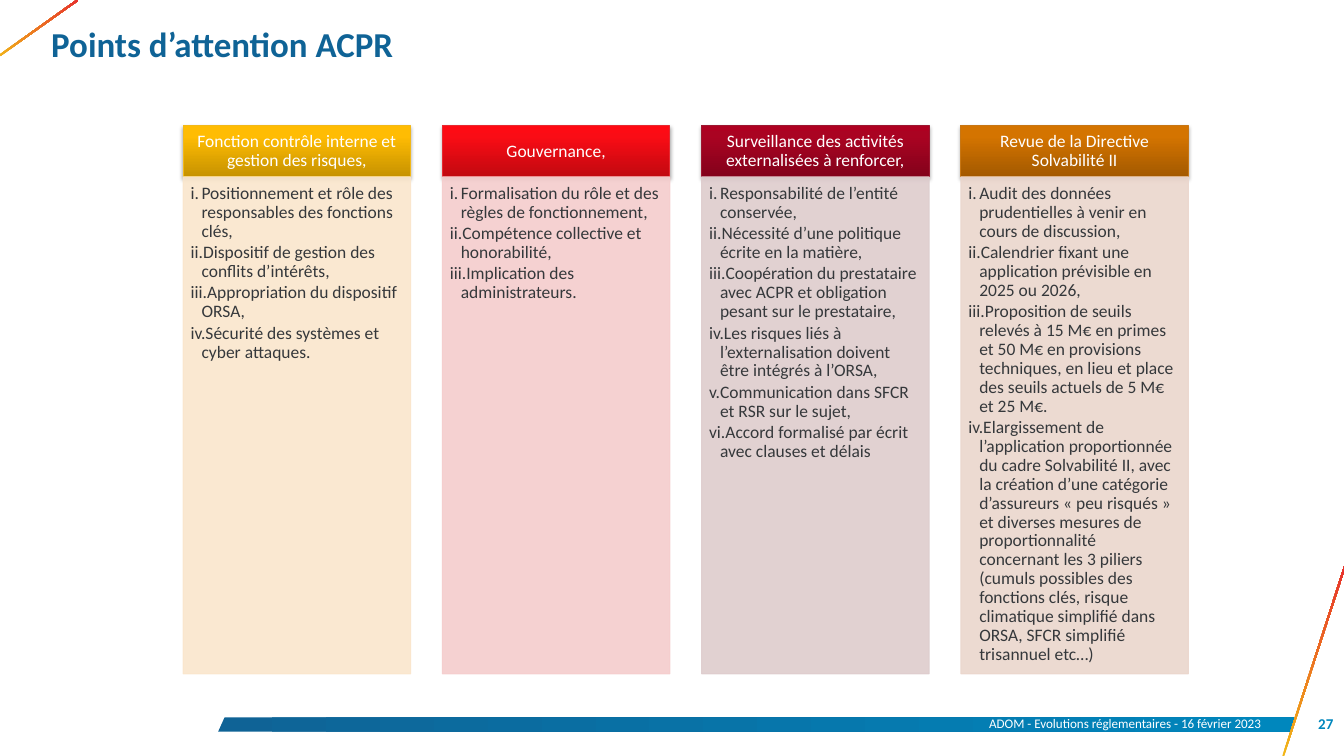
from dataclasses import dataclass
from copy import deepcopy

from lxml.etree import SubElement
from pptx import Presentation
from pptx.dml.color import RGBColor
from pptx.enum.shapes import MSO_SHAPE
from pptx.enum.text import MSO_ANCHOR, PP_ALIGN
from pptx.oxml.ns import qn
from pptx.shapes.autoshape import Shape
from pptx.slide import Slide
from pptx.text.text import TextFrame
from pptx.util import Cm, Pt

WHITE = RGBColor(0xFF, 0xFF, 0xFF)
INK = RGBColor(0x35, 0x38, 0x3B)
NAVY = RGBColor(0x0F, 0x63, 0x96)
BLUE = RGBColor(0x00, 0x87, 0xBD)
GOLD = RGBColor(0xF2, 0xB8, 0x18)
RED = RGBColor(0xE6, 0x29, 0x30)
WINE = RGBColor(0x9C, 0x17, 0x30)
RUST = RGBColor(0xC7, 0x76, 0x14)

LEFT, STEP, WIDTH = 5.18, 7.33, 6.43
TOP, HEAD, BODY = 3.56, 1.44, 14.05

Box = tuple[float, float, float, float]
Stops = list[tuple[float, RGBColor]]


@dataclass
class Topic:
    title: str
    edge: RGBColor
    low: RGBColor
    mid: RGBColor
    high: RGBColor
    pale: RGBColor
    items: list[str]


@dataclass
class Label:
    text: str
    box: Box
    size: float
    color: RGBColor
    bold: bool
    align: PP_ALIGN
    anchor: MSO_ANCHOR
    pads: Box


TOPICS = [
    Topic("Fonction contrôle interne et gestion des risques,", GOLD,
          RGBColor(0xC6, 0x92, 0x00), RGBColor(0xFF, 0xBC, 0x03),
          RGBColor(0xFF, 0xBC, 0x04), RGBColor(0xFA, 0xE6, 0xCC),
          ["Positionnement et rôle des responsables des fonctions clés,",
           "Dispositif de gestion des conflits d’intérêts,",
           "Appropriation du dispositif ORSA,",
           "Sécurité des systèmes et cyber attaques."]),
    Topic("Gouvernance,", RED,
          RGBColor(0xC1, 0x09, 0x10), RGBColor(0xFA, 0x0C, 0x15),
          RGBColor(0xFF, 0x09, 0x12), RGBColor(0xF5, 0xCD, 0xCD),
          ["Formalisation du rôle et des règles de fonctionnement,",
           "Compétence collective et honorabilité,",
           "Implication des administrateurs."]),
    Topic("Surveillance des activités externalisées à renforcer,", WINE,
          RGBColor(0x83, 0x02, 0x1B), RGBColor(0xAA, 0x03, 0x22),
          RGBColor(0xAE, 0x00, 0x21), RGBColor(0xDE, 0xCC, 0xCD),
          ["Responsabilité de l’entité conservée,",
           "Nécessité d’une politique écrite en la matière,",
           "Coopération du prestataire avec ACPR et obligation pesant sur "
           "le prestataire,",
           "Les risques liés à l’externalisation doivent être intégrés à "
           "l’ORSA,",
           "Communication dans SFCR et RSR sur le sujet,",
           "Accord formalisé par écrit avec clauses et délais"]),
    Topic("Revue de la Directive Solvabilité II", RUST,
          RGBColor(0xA3, 0x59, 0x00), RGBColor(0xD4, 0x74, 0x00),
          RGBColor(0xD5, 0x75, 0x00), RGBColor(0xEB, 0xD6, 0xCC),
          ["Audit des données prudentielles à venir en cours de discussion,",
           "Calendrier fixant une application prévisible en 2025 ou 2026,",
           "Proposition de seuils relevés à 15 M€ en primes et 50 M€ en "
           "provisions techniques, en lieu et place des seuils actuels de "
           "5 M€ et 25 M€.",
           "Elargissement de l’application proportionnée du cadre "
           "Solvabilité II, avec la création d’une catégorie d’assureurs "
           "« peu risqués » et diverses mesures de proportionnalité "
           "concernant les 3 piliers (cumuls possibles des fonctions clés, "
           "risque climatique simplifié dans ORSA, SFCR simplifié "
           "trisannuel etc…)"]),
]

LABELS = [
    Label("Points d’attention ACPR", (1.35, 0.54, 35.31, 2.29), 28, NAVY, True,
          PP_ALIGN.LEFT, MSO_ANCHOR.TOP, (0.1, 0.1, 0.1, 0.1)),
    Label("ADOM - Evolutions réglementaires - 16 février 2023",
          (7.92, 20.1, 27.99, 0.69), 10.5, WHITE, False,
          PP_ALIGN.RIGHT, MSO_ANCHOR.MIDDLE, (0.25, 0.13, 0.25, 0.13)),
    Label("27", (36.25, 20.17, 1.45, 0.58), 12, BLUE, True,
          PP_ALIGN.RIGHT, MSO_ANCHOR.MIDDLE, (0, 0, 0, 0)),
]

# Thin slanted bars: box and rotation
BARS = [((34.24, 18.57, 5.89, 0.05), 288), ((-0.25, 0.76, 2.69, 0.05), 324.6)]


def blend(shape: Shape, stops: Stops, angle: float) -> None:
    """Fill with a gradient; the angle runs counter-clockwise."""
    fill = shape.fill
    fill.gradient()
    fill.gradient_angle = angle
    marks = shape.element.spPr.find(".//" + qn("a:gsLst"))
    while len(marks) < len(stops):
        marks.append(deepcopy(marks[0]))
    for mark, (place, color) in zip(fill.gradient_stops, stops):
        mark.position = place
        mark.color.rgb = color


def fade(shape: Shape, percent: int) -> None:
    """Make the fill and line of a shape translucent."""
    for color in shape.element.spPr.iter(qn("a:srgbClr")):
        SubElement(color, qn("a:alpha"), val=str(percent * 1000))


def shade(shape: Shape) -> None:
    """Cast a soft shadow downwards."""
    effects = shape.element.spPr.find(qn("a:effectLst"))
    outer = SubElement(effects, qn("a:outerShdw"), blurRad=str(Pt(3.1)),
                       dist=str(Pt(1.8)), dir="5400000", rotWithShape="0")
    color = SubElement(outer, qn("a:srgbClr"), val="000000")
    SubElement(color, qn("a:alpha"), val="35000")


def add_rect(slide: Slide, box: Box) -> Shape:
    shape = slide.shapes.add_shape(MSO_SHAPE.RECTANGLE, *map(Cm, box))
    shape.shadow.inherit = False
    shape.line.fill.background()
    return shape


def outline(shape: Shape, color: RGBColor) -> None:
    shape.line.color.rgb = color
    shape.line.width = Pt(0.75)


def style(frame: TextFrame, size: float, color: RGBColor, align: PP_ALIGN,
          anchor: MSO_ANCHOR, pads: Box, bold: bool = False) -> None:
    frame.word_wrap = True
    frame.vertical_anchor = anchor
    (frame.margin_left, frame.margin_top,
     frame.margin_right, frame.margin_bottom) = map(Cm, pads)
    for para in frame.paragraphs:
        para.alignment = align
        for run in para.runs:
            font = run.font
            font.name, font.size, font.bold = "Calibri", Pt(size), bold
            font.color.rgb = color


def add_label(slide: Slide, label: Label) -> None:
    frame = slide.shapes.add_textbox(*map(Cm, label.box)).text_frame
    frame.text = label.text
    style(frame, label.size, label.color, label.align, label.anchor,
          label.pads, label.bold)


def add_topic(slide: Slide, topic: Topic, left: float) -> None:
    head = add_rect(slide, (left, TOP, WIDTH, HEAD))
    blend(head, [(0, topic.low), (0.8, topic.mid), (1, topic.high)], 90)
    outline(head, topic.edge)
    shade(head)
    head.text_frame.text = topic.title
    head.text_frame.paragraphs[0].line_spacing = 0.9
    style(head.text_frame, 14, WHITE, PP_ALIGN.CENTER, MSO_ANCHOR.MIDDLE,
          (0.28, 0.16, 0.28, 0.16))

    body = add_rect(slide, (left, TOP + HEAD, WIDTH, BODY))
    body.fill.solid()
    body.fill.fore_color.rgb = topic.pale
    outline(body, topic.pale)
    fade(body, 90)
    body.text_frame.text = "\n".join(topic.items)
    for para in body.text_frame.paragraphs:
        para.level = 1
        para.line_spacing = 0.9
        para.space_after = Pt(2)
        props = para._p.get_or_add_pPr()
        props.set("marL", str(Cm(0.31)))
        props.set("indent", str(Cm(-0.31)))
        SubElement(props, qn("a:buAutoNum"), type="romanLcPeriod")
    style(body.text_frame, 14, INK, PP_ALIGN.LEFT, MSO_ANCHOR.TOP,
          (0.21, 0.21, 0.28, 0.31))


def add_band(slide: Slide) -> None:
    """Draw the slanted footer band."""
    pen = slide.shapes.build_freeform(Cm(6.35), Cm(20.28))
    corners = [(36.65, 20.28), (36.5, 20.68), (6.17, 20.68)]
    pen.add_line_segments([(Cm(x), Cm(y)) for x, y in corners], close=True)
    band = pen.convert_to_shape()
    band.shadow.inherit = False
    band.line.fill.background()
    blend(band, [(0, NAVY), (1, BLUE)], 0)


def main() -> None:
    deck = Presentation()
    deck.slide_width, deck.slide_height = Cm(38), Cm(21.37)
    slide = deck.slides.add_slide(deck.slide_layouts[6])
    add_band(slide)
    for box, turn in BARS:
        bar = add_rect(slide, box)
        bar.rotation = turn
        blend(bar, [(0, GOLD), (1, RED)], 320)
    for label in LABELS:
        add_label(slide, label)
    for i, topic in enumerate(TOPICS):
        add_topic(slide, topic, LEFT + i * STEP)
    deck.save("out.pptx")


if __name__ == "__main__":
    main()
